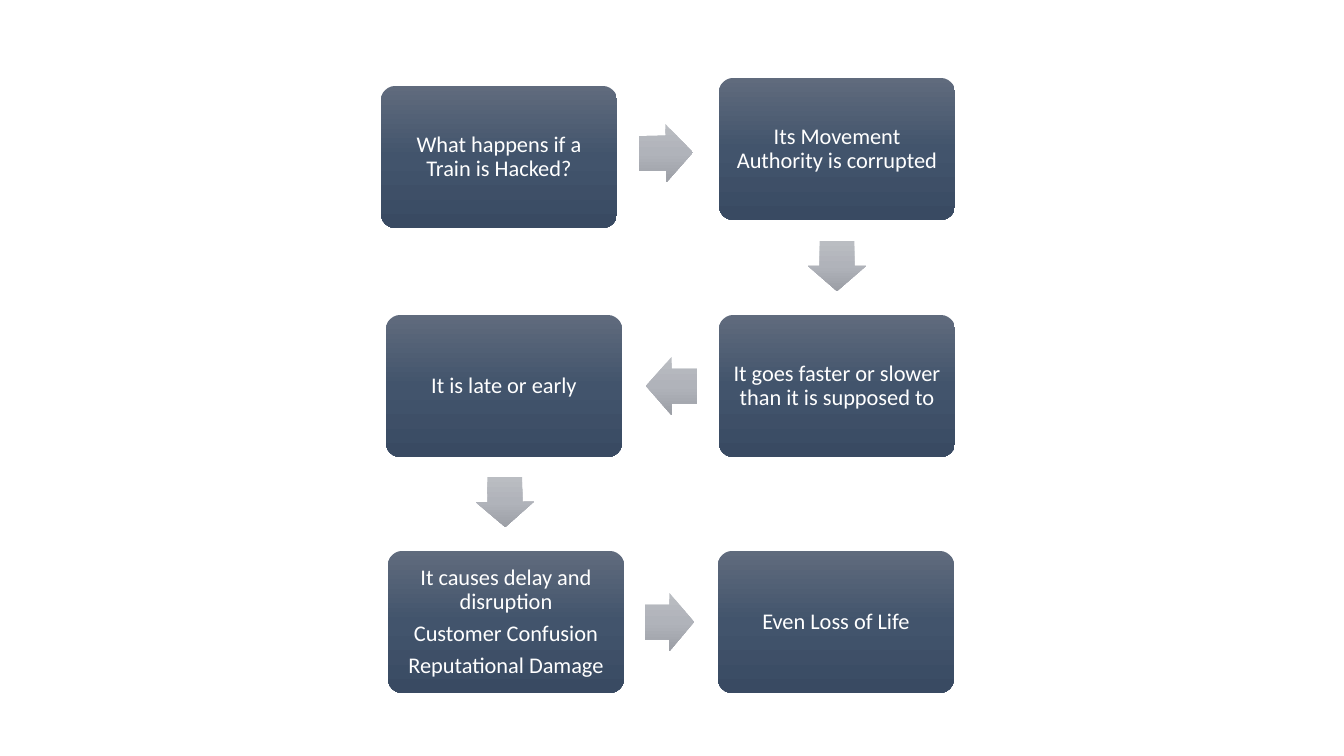
"""Build a slide showing the chain of events after a train is hacked."""
from copy import deepcopy

from pptx import Presentation
from pptx.dml.color import RGBColor
from pptx.enum.shapes import MSO_SHAPE
from pptx.enum.text import MSO_ANCHOR, PP_ALIGN
from pptx.oxml.ns import qn
from pptx.util import Emu, Pt

SCALE = 914400 / 100.8
BOX_WIDTH, BOX_HEIGHT = 236, 142
ARROW_HEIGHT = 58
BOX_COLOURS = ["606B7D", "42546C", "394A62"]
ARROW_COLOURS = ["BABDC2", "B0B3BA", "9C9FA6"]
STEPS = [
    (381, 86, ["What happens if a Train is Hacked?"]),
    (719, 78, ["Its Movement Authority is corrupted"]),
    (719, 315, ["It goes faster or slower than it is supposed to"]),
    (386, 315, ["It is late or early"]),
    (388, 551, ["It causes delay and disruption", "Customer Confusion", "Reputational Damage"]),
    (718, 551, ["Even Loss of Life"]),
]
ARROWS = [
    (639, 124, 54, 358.7),
    (812, 237, 50, 90),
    (646, 357, 51, 180),
    (480, 473, 50, 89.3),
    (645, 593, 49, 0),
]


def add_gradient_shape(page, preset, frame, colours, adjustments, rotation=0):
    """Add a borderless shape with a three-stop gradient running downwards."""
    shape = page.shapes.add_shape(preset, *[Emu(round(length * SCALE)) for length in frame])
    shape.shadow.inherit = False
    shape.line.fill.background()
    shape.rotation = rotation
    for index, value in enumerate(adjustments):
        shape.adjustments[index] = value
    shape.fill.gradient()
    shape.fill.gradient_angle = 270
    gradient = shape._element.spPr.find(qn("a:gradFill"))
    gradient.set("rotWithShape", "0")
    first_stop = gradient.find(qn("a:gsLst"))[0]
    middle_stop = deepcopy(first_stop)
    middle_stop.set("pos", "50000")
    first_stop.addnext(middle_stop)
    for stop, colour in zip(shape.fill.gradient_stops, colours):
        stop.color.rgb = RGBColor.from_string(colour)
    return shape


def write_text(box, lines, size=16, font="Calibri", colour="FFFFFF", inset=7):
    """Write centred paragraphs into a box."""
    frame = box.text_frame
    frame.word_wrap = True
    frame.vertical_anchor = MSO_ANCHOR.MIDDLE
    margin = Emu(round(inset * SCALE))
    frame.margin_left = frame.margin_right = margin
    frame.margin_top = frame.margin_bottom = margin
    for index, line in enumerate(lines):
        para = frame.add_paragraph() if index else frame.paragraphs[0]
        para.alignment = PP_ALIGN.CENTER
        para.line_spacing = 0.9
        para.space_after = Pt(size * 0.35)
        span = para.add_run()
        span.text = line
        span.font.size = Pt(size)
        span.font.name = font
        span.font.color.rgb = RGBColor.from_string(colour)


deck = Presentation()
deck.slide_width = Emu(round(1344 * SCALE))
deck.slide_height = Emu(round(756 * SCALE))
page = deck.slides.add_slide(deck.slide_layouts[6])

for left, top, lines in STEPS:
    box = add_gradient_shape(page, MSO_SHAPE.ROUNDED_RECTANGLE,
                             (left, top, BOX_WIDTH, BOX_HEIGHT), BOX_COLOURS, [0.1])
    write_text(box, lines)

for left, top, length, rotation in ARROWS:
    add_gradient_shape(page, MSO_SHAPE.RIGHT_ARROW, (left, top, length, ARROW_HEIGHT),
                       ARROW_COLOURS, [0.6, 0.5], rotation)

deck.save("out.pptx")
